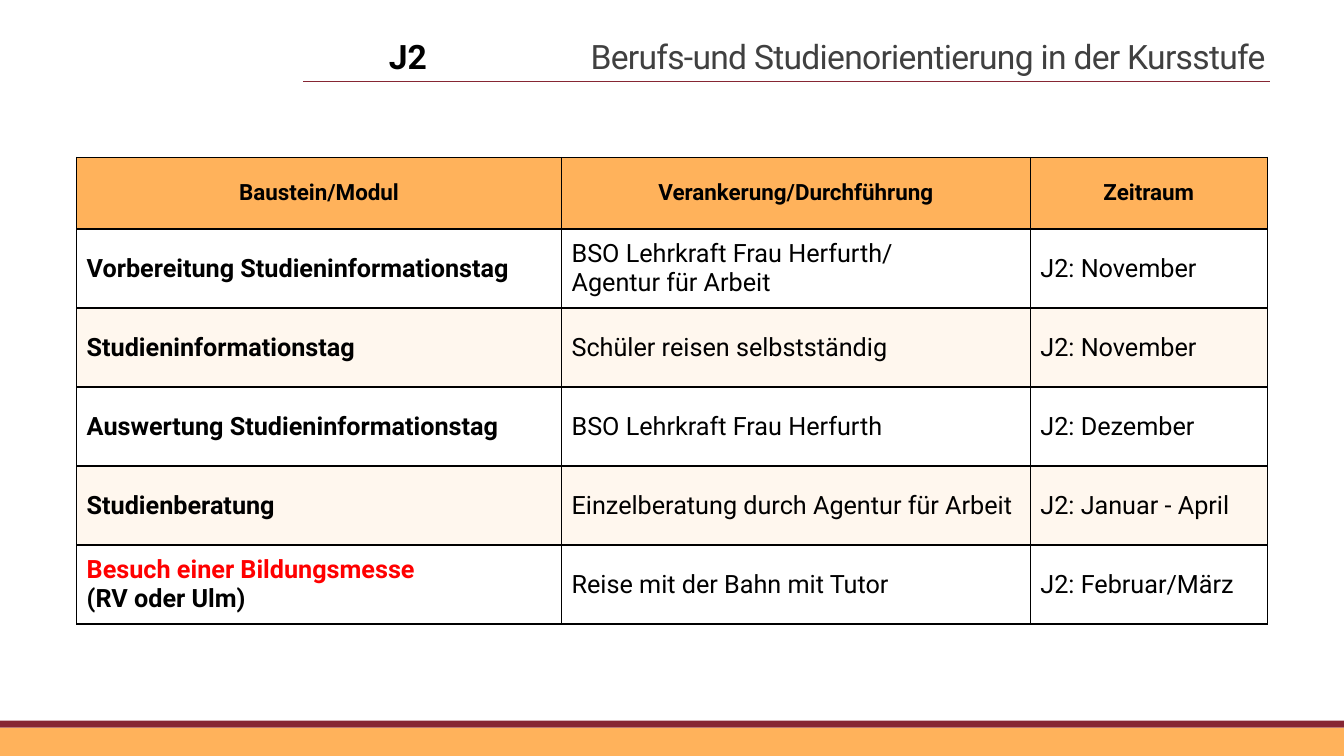
from lxml.etree import SubElement
from pptx import Presentation
from pptx.dml.color import RGBColor
from pptx.enum.shapes import MSO_CONNECTOR, MSO_SHAPE
from pptx.enum.text import MSO_ANCHOR, MSO_AUTO_SIZE, PP_ALIGN
from pptx.oxml import parse_xml
from pptx.oxml.ns import nsdecls, qn
from pptx.util import Inches, Pt

theme = {
    "font": "Roboto", "wine": "862633", "amber": "FFB25B", "white": "FFFFFF",
    "black": "000000", "grey": "404040", "red": "FF0000",
    "title": 24, "head": 16, "body": 18, "line": 1,
}

deck = Presentation()
deck.slide_width, deck.slide_height = Inches(13.33), Inches(7.5)
slide = deck.slides.add_slide(deck.slide_layouts[6])
shapes = slide.shapes


def place(left, top, width, height):
    wide, high = deck.slide_width / 100, deck.slide_height / 100
    return int(left * wide), int(top * high), int(width * wide), int(height * high)


def style(part, size, color, bold=False):
    for run in part.runs:
        run.font.name = theme["font"]
        run.font.size = Pt(theme[size])
        run.font.bold = bold
        run.font.color.rgb = RGBColor.from_string(theme[color])


for top, height, color in [(95.33, 0.94, "wine"), (96.27, 3.73, "amber")]:
    band = shapes.add_shape(MSO_SHAPE.RECTANGLE, *place(0, top, 100, height))
    band.shadow.inherit = False
    band.fill.solid()
    band.fill.fore_color.rgb = RGBColor.from_string(theme[color])
    band.line.fill.background()

left, top, right, _ = place(22.58, 10.8, 94.52, 0)
rule = shapes.add_connector(MSO_CONNECTOR.STRAIGHT, left, top, right, top)
rule.line.color.rgb = RGBColor.from_string(theme["wine"])
rule.line.width = Pt(theme["line"])
SubElement(rule._element.spPr, qn("a:effectLst"))

title = shapes.add_textbox(*place(43.2, 5.2, 52.96, 5.6)).text_frame
title.text = "Berufs-und Studienorientierung in der Kursstufe"
title.word_wrap = True
title.vertical_anchor = MSO_ANCHOR.BOTTOM
title.paragraphs[0].line_spacing = 0.85
style(title.paragraphs[0], "title", "grey")
title.paragraphs[0].runs[0].font._element.set("spc", "-50")

grade = shapes.add_textbox(*place(28.2, 4.13, 5.18, 6.67)).text_frame
grade.text = "J2"
grade.word_wrap = True
grade.auto_size = MSO_AUTO_SIZE.SHAPE_TO_FIT_TEXT
style(grade.paragraphs[0], "title", "black", True)

plan = [
    ("Baustein/Modul", "Verankerung/Durchführung", "Zeitraum"),
    ("Vorbereitung Studieninformationstag",
     "BSO Lehrkraft Frau Herfurth/\nAgentur für Arbeit", "J2: November"),
    ("Studieninformationstag", "Schüler reisen selbstständig", "J2: November"),
    ("Auswertung Studieninformationstag", "BSO Lehrkraft Frau Herfurth", "J2: Dezember"),
    ("Studienberatung", "Einzelberatung durch Agentur für Arbeit", "J2: Januar - April"),
    ("Besuch einer Bildungsmesse\n(RV oder Ulm)", "Reise mit der Bahn mit Tutor",
     "J2: Februar/März"),
]
widths = [36.08, 34.88, 17.63]
heights = [9.47] + [10.45] * 5
area = place(5.7, 20.83, sum(widths), sum(heights))
table = shapes.add_table(len(plan), len(widths), *area).table
for col, width in zip(table.columns, widths):
    col.width = place(0, 0, width, 0)[2]
for row, height in zip(table.rows, heights):
    row.height = place(0, 0, 0, height)[3]

for r, line in enumerate(plan):
    for c, text in enumerate(line):
        cell = table.cell(r, c)
        cell.text_frame.text = text
        cell.vertical_anchor = MSO_ANCHOR.MIDDLE
        cell.fill.solid()
        cell.fill.fore_color.rgb = RGBColor.from_string(
            theme["white" if r % 2 else "amber"])
        props = cell._tc.get_or_add_tcPr()
        if r and r % 2 == 0:
            tint = props.find(qn("a:solidFill"))[0]
            SubElement(tint, qn("a:alpha"), val="10000")
        for i, side in enumerate("LRTB"):
            props.insert(i, parse_xml(
                f'<a:ln{side} {nsdecls("a")} w="{Pt(theme["line"])}"><a:solidFill>'
                f'<a:srgbClr val="{theme["black"]}"/></a:solidFill></a:ln{side}>'))
        for part in cell.text_frame.paragraphs:
            part.alignment = PP_ALIGN.LEFT if r else PP_ALIGN.CENTER
            style(part, "body" if r else "head", "black", r == 0 or c == 0)

style(table.cell(5, 0).text_frame.paragraphs[0], "body", "red", True)

deck.save("out.pptx")
